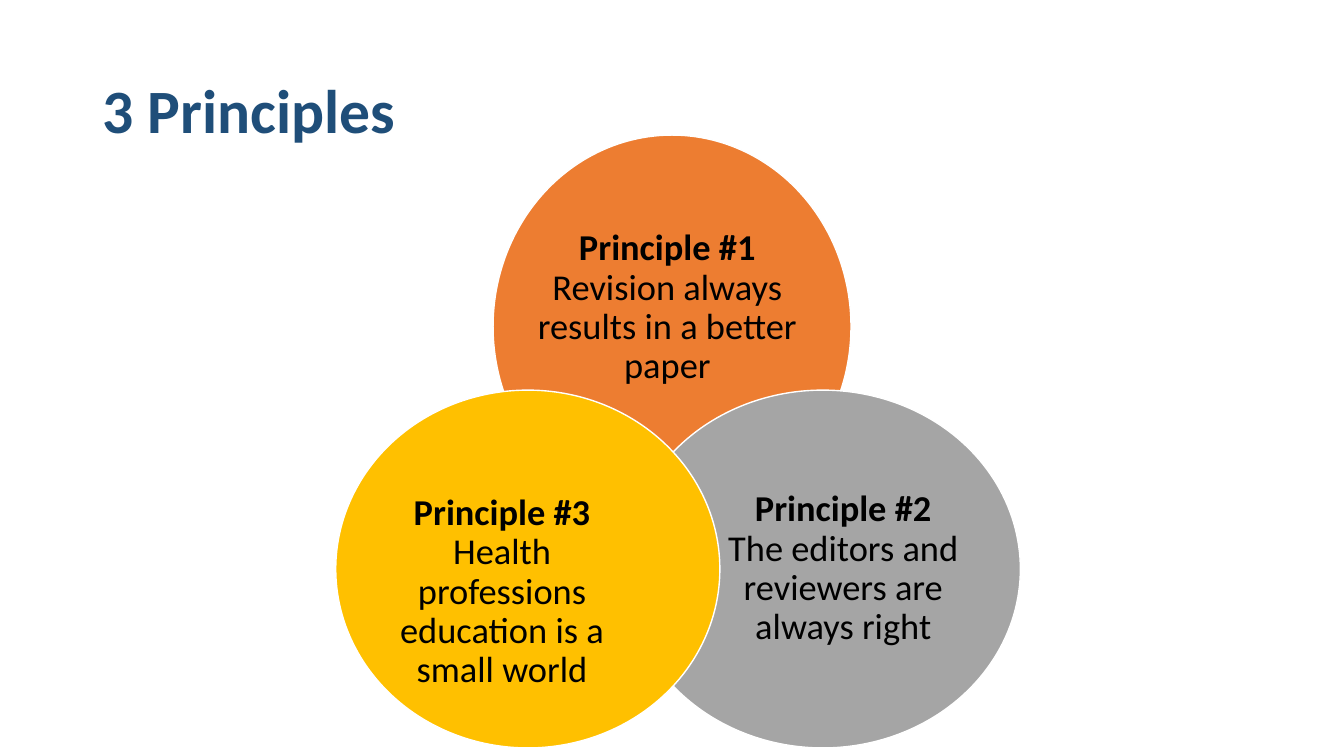
import pptx
import pptx.util
import pptx.dml.color
import pptx.enum.shapes
import pptx.enum.text

Inches = pptx.util.Inches
Pt = pptx.util.Pt
RGB = pptx.dml.color.RGBColor.from_string
ALIGN = pptx.enum.text.PP_ALIGN
MIDDLE = pptx.enum.text.MSO_ANCHOR.MIDDLE

THEME = {
    "title": {"name": "Calibri", "size": Pt(44), "bold": True, "color": "1F4E79"},
    "heading": {"name": "Calibri", "size": Pt(26), "bold": True, "color": "000000"},
    "body": {"name": "Calibri", "size": Pt(26), "bold": False, "color": "000000"},
    "circles": ["ED7D31", "A5A5A5", "FFC000"],
    "outline": "FFFFFF",
}


def add_run(p, text, style):
    r = p.add_run()
    r.text = text
    for name, value in THEME[style].items():
        if name == "color":
            r.font.color.rgb = RGB(value)
        else:
            setattr(r.font, name, value)


def set_frame(tf, align, margins):
    tf.word_wrap = True
    tf.auto_size = pptx.enum.text.MSO_AUTO_SIZE.NONE
    tf.vertical_anchor = MIDDLE
    for side, value in margins.items():
        setattr(tf, f"margin_{side}", Inches(value))
    p = tf.paragraphs[0]
    p.alignment = align
    p.line_spacing = 0.9
    return p


prs = pptx.Presentation()
prs.slide_width = Inches(13.33)
prs.slide_height = Inches(7.5)
s = prs.slides.add_slide(prs.slide_layouts[5])

title = s.shapes.title
title.left, title.top, title.width, title.height = map(Inches, (0.92, 0.4, 11.5, 1.45))
p = set_frame(title.text_frame, ALIGN.LEFT, {"left": 0.1, "right": 0.1, "top": 0.05, "bottom": 0.05})
add_run(p, "3 Principles", "title")

principles = [
    ("Revision always results in a better paper", (4.89, 1.34, 3.55, 3.8), (5.32, 2.2, 2.6, 1.71)),
    ("The editors and reviewers are always right", (6.2, 3.87, 3.92, 3.55), (7.08, 4.67, 2.57, 1.95)),
    ("Health professions education is a small world", (3.33, 3.87, 3.81, 3.55), (3.84, 4.9, 2.28, 1.95)),
]
no_margins = dict.fromkeys(("left", "right", "top", "bottom"), 0)

for number, (text, circle, box) in enumerate(principles, 1):
    sp = s.shapes.add_shape(pptx.enum.shapes.MSO_SHAPE.OVAL, *map(Inches, circle))
    sp.shadow.inherit = False
    sp.fill.solid()
    sp.fill.fore_color.rgb = RGB(THEME["circles"][number - 1])
    sp.line.color.rgb = RGB(THEME["outline"])
    sp.line.width = Pt(1)

    tb = s.shapes.add_textbox(*map(Inches, box))
    p = set_frame(tb.text_frame, ALIGN.CENTER, no_margins)
    add_run(p, f"Principle #{number}", "heading")
    p.add_line_break()
    add_run(p, text, "body")

prs.save("out.pptx")
